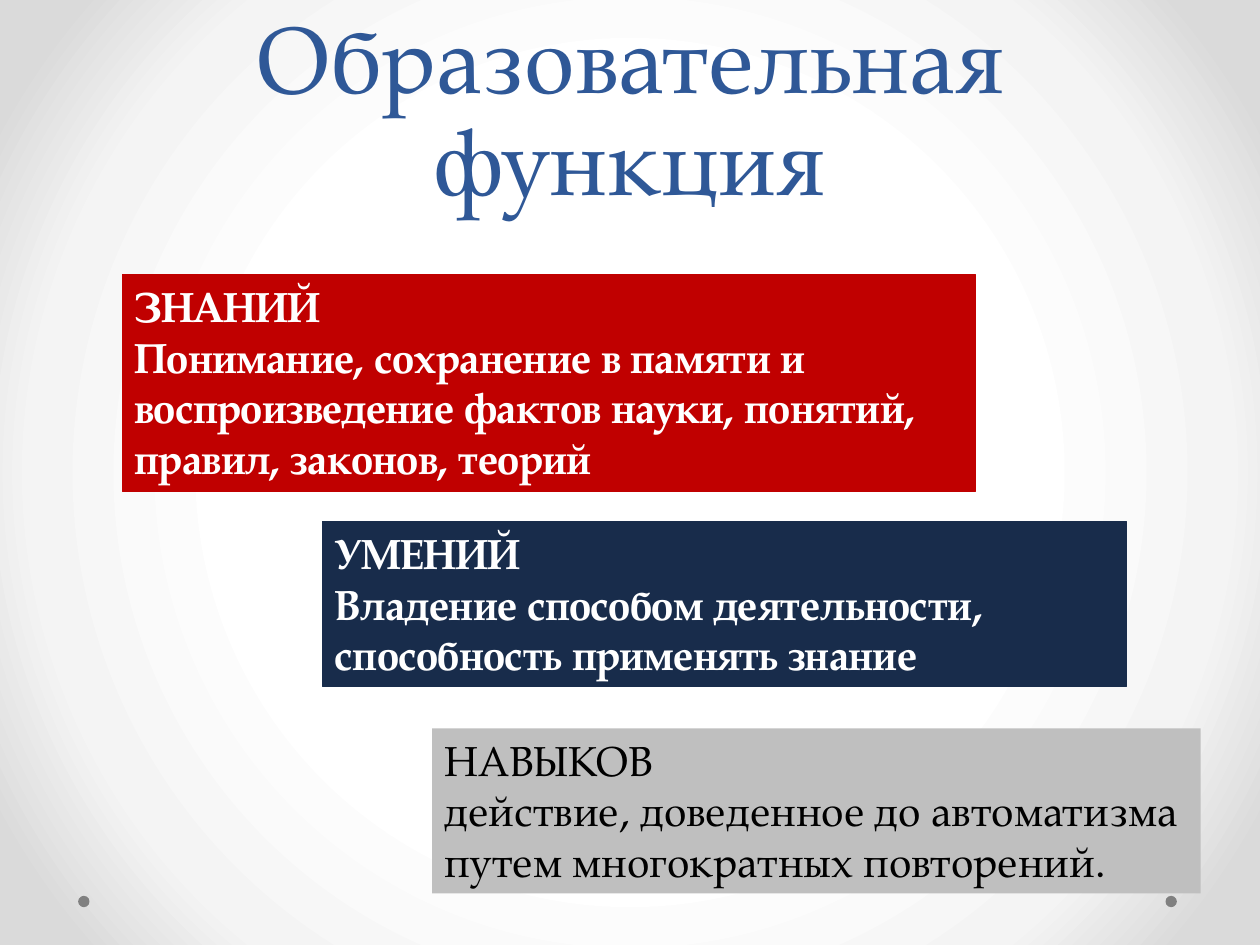
from pptx import Presentation
from pptx.dml.color import RGBColor
from pptx.enum.shapes import MSO_SHAPE as Shape
from pptx.enum.text import MSO_ANCHOR as Anchor, MSO_AUTO_SIZE as Fit, PP_ALIGN as Align
from pptx.oxml import parse_xml
from pptx.oxml.ns import nsdecls, qn
from pptx.util import Inches, Pt


def tint(code):
    return RGBColor.from_string(code)


def write(frame, *lines, font, size, color, bold=False, align=Align.LEFT,
          anchor=Anchor.TOP, lead=None):
    frame.word_wrap = True
    frame.vertical_anchor = anchor
    for i, line in enumerate(lines):
        para = frame.paragraphs[0] if i == 0 else frame.add_paragraph()
        para.alignment = align
        para.line_spacing = lead
        run = para.add_run()
        run.text = line
        run.font.name = font
        run.font.size = Pt(size)
        run.font.bold = bold
        run.font.color.rgb = tint(color)


class Deck:
    """Holds the style and the current slide."""

    font = "TeX Gyre Pagella"

    def __init__(self, slide):
        self.slide = slide

    def glow(self, stops):
        self.slide.background.fill.gradient()
        old = self.slide.element.find(".//" + qn("a:gradFill"))
        marks = "".join(
            f'<a:gs pos="{pos * 1000}"><a:srgbClr val="{code}"/></a:gs>'
            for pos, code in stops)
        new = parse_xml(
            f'<a:gradFill {nsdecls("a")} rotWithShape="1"><a:gsLst>{marks}</a:gsLst>'
            '<a:path path="circle"><a:fillToRect l="50000" t="50000" r="50000" b="50000"/>'
            '</a:path></a:gradFill>')
        old.getparent().replace(old, new)

    def shape(self, kind, box, fill, line=None):
        item = self.slide.shapes.add_shape(kind, *map(Inches, box))
        item.shadow.inherit = False
        item.fill.solid()
        item.fill.fore_color.rgb = tint(fill)
        if line:
            item.line.color.rgb = tint(line)
            item.line.width = Pt(0.75)
        else:
            item.line.fill.background()
        return item

    def dot(self, left):
        self.shape(Shape.OVAL, (left, 7.11, 0.09, 0.09), "808080")

    def title(self, text, box):
        frame = self.slide.shapes.add_textbox(*map(Inches, box)).text_frame
        write(frame, text, font=self.font, size=54, color="2F5897",
              align=Align.CENTER, anchor=Anchor.BOTTOM, lead=Pt(58))

    def card(self, head, body, box, fill, line=None, color="FFFFFF", bold=True):
        frame = self.shape(Shape.RECTANGLE, box, fill, line).text_frame
        write(frame, head, body, font=self.font, size=24, color=color, bold=bold)
        frame.auto_size = Fit.SHAPE_TO_FIT_TEXT


def main():
    show = Presentation()
    show.slide_width, show.slide_height = Inches(10), Inches(7.5)
    deck = Deck(show.slides.add_slide(show.slide_layouts[6]))
    deck.glow([(50, "FFFFFF"), (76, "F4F4F4"), (92, "DADADA")])
    for left in (9.25, 0.62):
        deck.dot(left)
    deck.title("Образовательная функция", (0.5, 0, 9, 1.75))
    deck.card("ЗНАНИЙ",
              "Понимание, сохранение в памяти и воспроизведение фактов науки, "
              "понятий, правил, законов, теорий",
              (0.97, 2.18, 6.77, 1.72), "C00000", line="C00000")
    deck.card("УМЕНИЙ",
              "Владение способом деятельности, способность применять знание",
              (2.56, 4.14, 6.38, 1.31), "182C4B", line="182C4B")
    deck.card("НАВЫКОВ",
              "действие, доведенное до автоматизма путем многократных повторений.",
              (3.43, 5.78, 6.1, 1.31), "BFBFBF", color="000000", bold=False)
    show.save("out.pptx")


if __name__ == "__main__":
    main()
